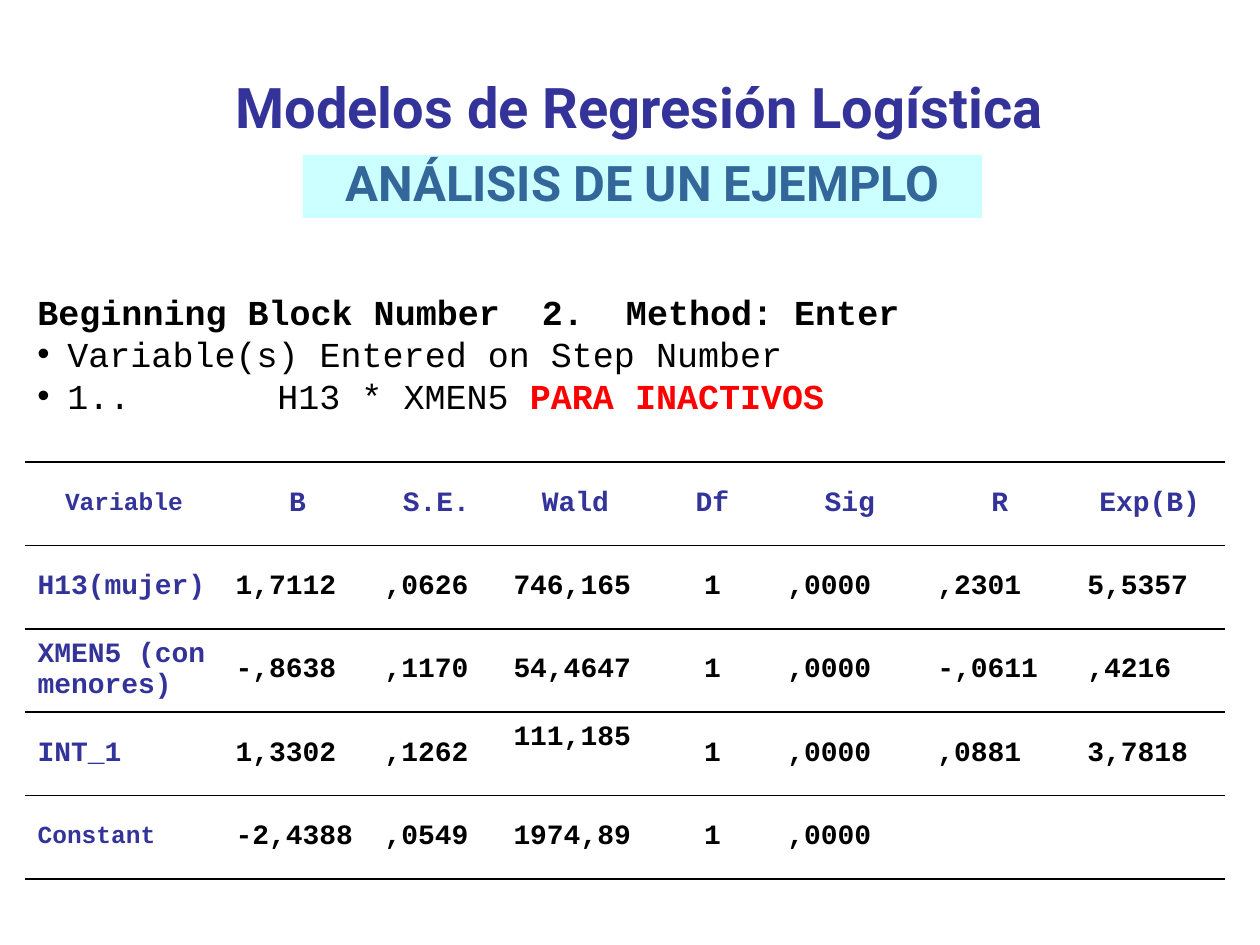
from lxml import etree
from pptx import Presentation
from pptx.dml.color import RGBColor
from pptx.enum.shapes import MSO_SHAPE
from pptx.enum.text import MSO_ANCHOR, PP_ALIGN
from pptx.oxml.ns import qn
from pptx.util import Pt

RECTANGLE = MSO_SHAPE.RECTANGLE
MIDDLE = MSO_ANCHOR.MIDDLE
LEFT, CENTER = PP_ALIGN.LEFT, PP_ALIGN.CENTER
EMU_PER_PX = 914400 / 126
NAVY, BLACK, RED = "333399", "000000", "FF0000"
TITLE_FONT, MONO_FONT = "Roboto", "Courier New"


def px(length):
    return round(length * EMU_PER_PX)


def color(value):
    return RGBColor.from_string(value)


class SlideBuilder:
    """Hold the slide style and add each kind of element to the page."""

    def __init__(self, page):
        self.page = page

    def set_values(self, target, values):
        for name, value in values.items():
            setattr(target, name, value)

    def span(self, para, text, size, hex_color, font=MONO_FONT, bold=True):
        span = para.add_run()
        span.text = text
        self.set_values(span.font, {"size": Pt(size), "name": font, "bold": bold})
        span.font.color.rgb = color(hex_color)

    def text_box(self, left, top, width, height):
        box = self.page.shapes.add_textbox(px(left), px(top), px(width), px(height))
        box.text_frame.word_wrap = True
        return box.text_frame

    def title(self, text, left, top, width, height):
        frame = self.text_box(left, top, width, height)
        self.span(frame.paragraphs[0], text, 32, NAVY, TITLE_FONT)

    def banner(self, text, left, top, width, height):
        box = self.page.shapes.add_shape(RECTANGLE, px(left), px(top), px(width), px(height))
        box.shadow.inherit = False
        box.fill.solid()
        box.fill.fore_color.rgb = color("CCFFFF")
        box.line.fill.background()
        box.text_frame.vertical_anchor = MIDDLE
        para = box.text_frame.paragraphs[0]
        self.set_values(para, {"alignment": CENTER, "line_spacing": 0.85})
        self.span(para, text, 28, "336699", TITLE_FONT)

    def bullet(self, para, indent, tab):
        properties = para._p.get_or_add_pPr()
        properties.set("marL", str(px(indent)))
        properties.set("indent", str(-px(indent)))
        etree.SubElement(properties, qn("a:buFont"), typeface="Arial")
        etree.SubElement(properties, qn("a:buChar"), char="•")
        tabs = etree.SubElement(properties, qn("a:tabLst"))
        etree.SubElement(tabs, qn("a:tab"), pos=str(px(tab)), algn="l")

    def body(self, lines, left, top, width, height):
        frame = self.text_box(left, top, width, height)
        for index, (bulleted, spans) in enumerate(lines):
            para = frame.add_paragraph() if index else frame.paragraphs[0]
            para.line_spacing = Pt(24)
            if bulleted:
                self.bullet(para, 30, 240)
            for text, hex_color, bold in spans:
                self.span(para, text, 20, hex_color, bold=bold)

    def borders(self, cell):
        properties = cell._tc.get_or_add_tcPr()
        for index, side in enumerate(("lnL", "lnR", "lnT", "lnB")):
            line = etree.Element(qn(f"a:{side}"), w=str(Pt(1)))
            properties.insert(index, line)
            if index < 2:
                etree.SubElement(line, qn("a:noFill"))
            else:
                fill = etree.SubElement(line, qn("a:solidFill"))
                etree.SubElement(fill, qn("a:srgbClr"), val=BLACK)

    def table(self, rows, widths, left, top, height):
        frame = self.page.shapes.add_table(
            len(rows), len(widths), px(left), px(top), px(sum(widths)), px(height))
        table = frame.table
        self.set_values(table, {"first_row": False, "horz_banding": False})
        for column, width in zip(table.columns, widths):
            column.width = px(width)
        for row_index, values in enumerate(rows):
            for column_index, text in enumerate(values):
                cell = table.cell(row_index, column_index)
                cell.fill.background()
                cell.vertical_anchor = MIDDLE
                self.borders(cell)
                if not text:
                    continue
                para = cell.text_frame.paragraphs[0]
                para.alignment = CENTER if row_index == 0 or column_index == 4 else LEFT
                size = 14 if text in ("Variable", "Constant") else 16
                label = row_index == 0 or column_index == 0
                self.span(para, text, size, NAVY if label else BLACK)
        return table


def main():
    deck = Presentation()
    deck.slide_width, deck.slide_height = px(1260), px(945)
    builder = SlideBuilder(deck.slides.add_slide(deck.slide_layouts[6]))
    builder.title("Modelos de Regresión Logística", 223, 66, 910, 79)
    builder.banner("ANÁLISIS DE UN EJEMPLO", 303, 155, 679, 63)
    rows = [
        ["Variable", "B", "S.E.", "Wald", "Df", "Sig", "R", "Exp(B)"],
        ["H13(mujer)", "1,7112", ",0626", "746,165", "1", ",0000", ",2301", "5,5357"],
        ["XMEN5 (con menores)", "-,8638", ",1170", "54,4647", "1", ",0000", "-,0611", ",4216"],
        ["INT_1", "1,3302", ",1262", "111,185", "1", ",0000", ",0881", "3,7818"],
        ["Constant", "-2,4388", ",0549", "1974,89", "1", ",0000", "", ""],
    ]
    widths = [198, 149, 129, 149, 125, 150, 150, 150]
    table = builder.table(rows, widths, 25, 462, 417)
    table.cell(3, 3).margin_bottom = px(38)
    builder.body([
        (False, [("Beginning Block Number  2.  Method: Enter", BLACK, True)]),
        (True, [("Variable(s) Entered on Step Number", BLACK, False)]),
        (True, [("1..\tH13 * XMEN5 ", BLACK, False), ("PARA INACTIVOS", RED, True)]),
    ], 25, 284, 1191, 140)
    deck.save("out.pptx")


if __name__ == "__main__":
    main()
